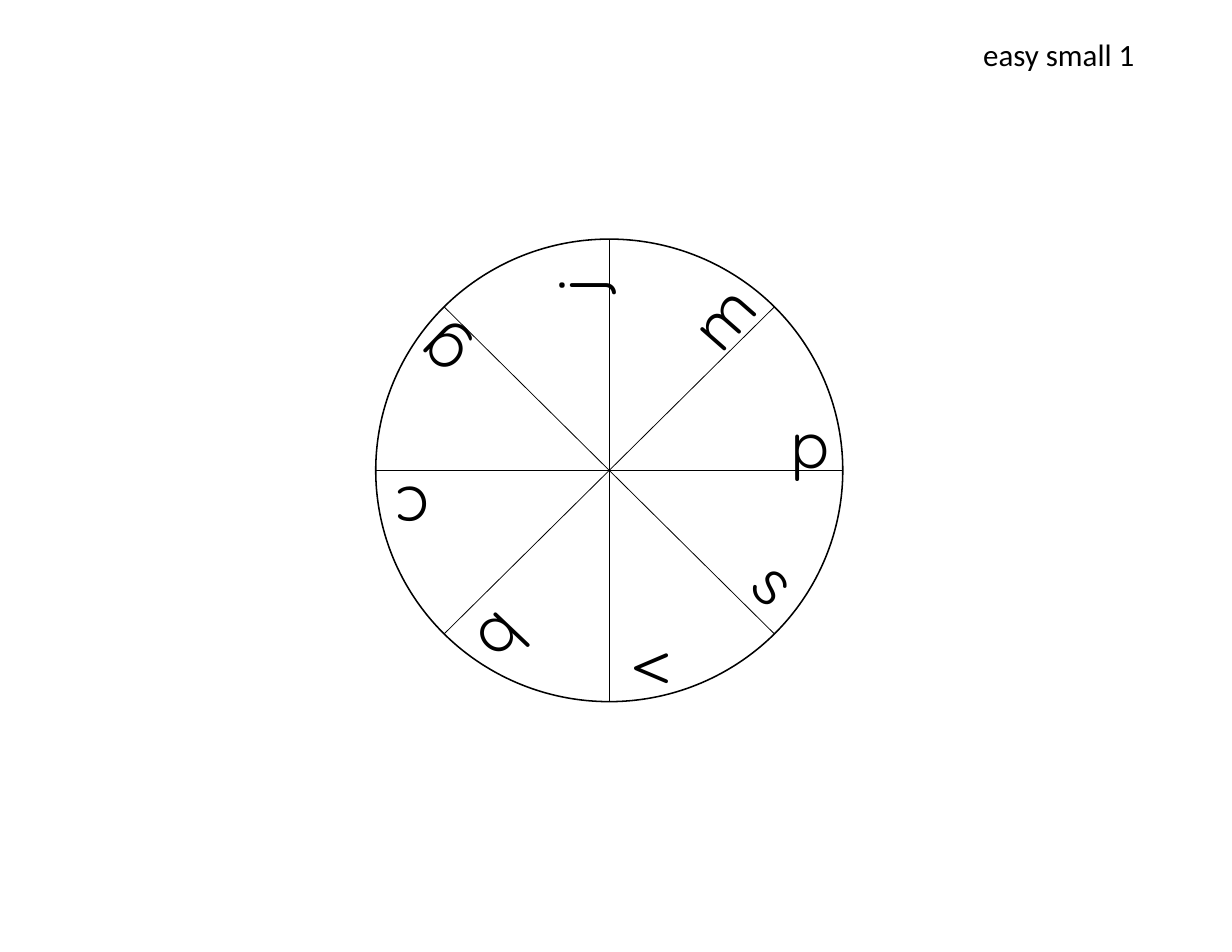
from math import cos, pi, sin
from typing import NamedTuple

from lxml import etree
from pptx import Presentation
from pptx.dml.color import RGBColor
from pptx.enum.shapes import MSO_CONNECTOR, MSO_SHAPE
from pptx.enum.text import MSO_AUTO_SIZE
from pptx.oxml.ns import qn
from pptx.shapes.group import GroupShape
from pptx.slide import Slide
from pptx.util import Inches, Pt

BLACK = RGBColor(0x00, 0x00, 0x00)
CENTER_X, CENTER_Y = 5.44, 4.2
RADIUS_X, RADIUS_Y = 2.085, 2.065
SECTORS = 8
LETTER_WIDTH, LETTER_HEIGHT = 0.47, 0.81


class Letter(NamedTuple):
    text: str
    left: float
    top: float
    rotation: float


LETTERS = [
    Letter("p", 6.96, 3.55, 0),
    Letter("s", 6.70, 4.79, 45.7),
    Letter("v", 5.66, 5.55, 90),
    Letter("b", 4.29, 5.28, 133.5),
    Letter("c", 3.46, 4.17, 180),
    Letter("g", 3.72, 2.80, 224),
    Letter("j", 4.93, 2.08, 270),
    Letter("m", 6.13, 2.52, 311.3),
]


def add_rim(wheel: GroupShape) -> None:
    rim = wheel.shapes.add_shape(
        MSO_SHAPE.OVAL,
        Inches(CENTER_X - RADIUS_X), Inches(CENTER_Y - RADIUS_Y),
        Inches(2 * RADIUS_X), Inches(2 * RADIUS_Y),
    )
    rim.shadow.inherit = False
    rim.fill.background()
    rim.line.color.rgb = BLACK
    rim.line.width = Pt(1)


def add_diameter(wheel: GroupShape, angle: float) -> None:
    """Draw a line across the wheel, through its centre."""
    dx, dy = RADIUS_X * cos(angle), RADIUS_Y * sin(angle)
    diameter = wheel.shapes.add_connector(
        MSO_CONNECTOR.STRAIGHT,
        Inches(CENTER_X - dx), Inches(CENTER_Y - dy),
        Inches(CENTER_X + dx), Inches(CENTER_Y + dy),
    )
    diameter.line.color.rgb = BLACK
    diameter.line.width = Pt(0.5)
    etree.SubElement(diameter._element.spPr, qn("a:effectLst"))


def add_text(slide: Slide, text: str, left: float, top: float, width: float,
             height: float, font: str, size: float, rotation: float = 0) -> None:
    box = slide.shapes.add_textbox(
        Inches(left), Inches(top), Inches(width), Inches(height))
    box.rotation = rotation
    frame = box.text_frame
    frame.word_wrap = True
    frame.auto_size = MSO_AUTO_SIZE.SHAPE_TO_FIT_TEXT
    run = frame.paragraphs[0].add_run()
    run.text = text
    run.font.name = font
    run.font.size = Pt(size)
    run.font.color.rgb = BLACK


def main() -> None:
    prs = Presentation()
    prs.slide_width, prs.slide_height = Inches(11), Inches(8.5)
    slide = prs.slides.add_slide(prs.slide_layouts[6])

    wheel = slide.shapes.add_group_shape()
    add_rim(wheel)
    for step in range(SECTORS // 2):
        add_diameter(wheel, step * 2 * pi / SECTORS)

    for letter in LETTERS:
        add_text(slide, letter.text, letter.left, letter.top, LETTER_WIDTH,
                 LETTER_HEIGHT, "Quicksand", 41.9, letter.rotation)
    add_text(slide, "easy small 1", 8.68, 0.27, 1.83, 0.44, "Calibri", 19.9)

    prs.save("out.pptx")


if __name__ == "__main__":
    main()
